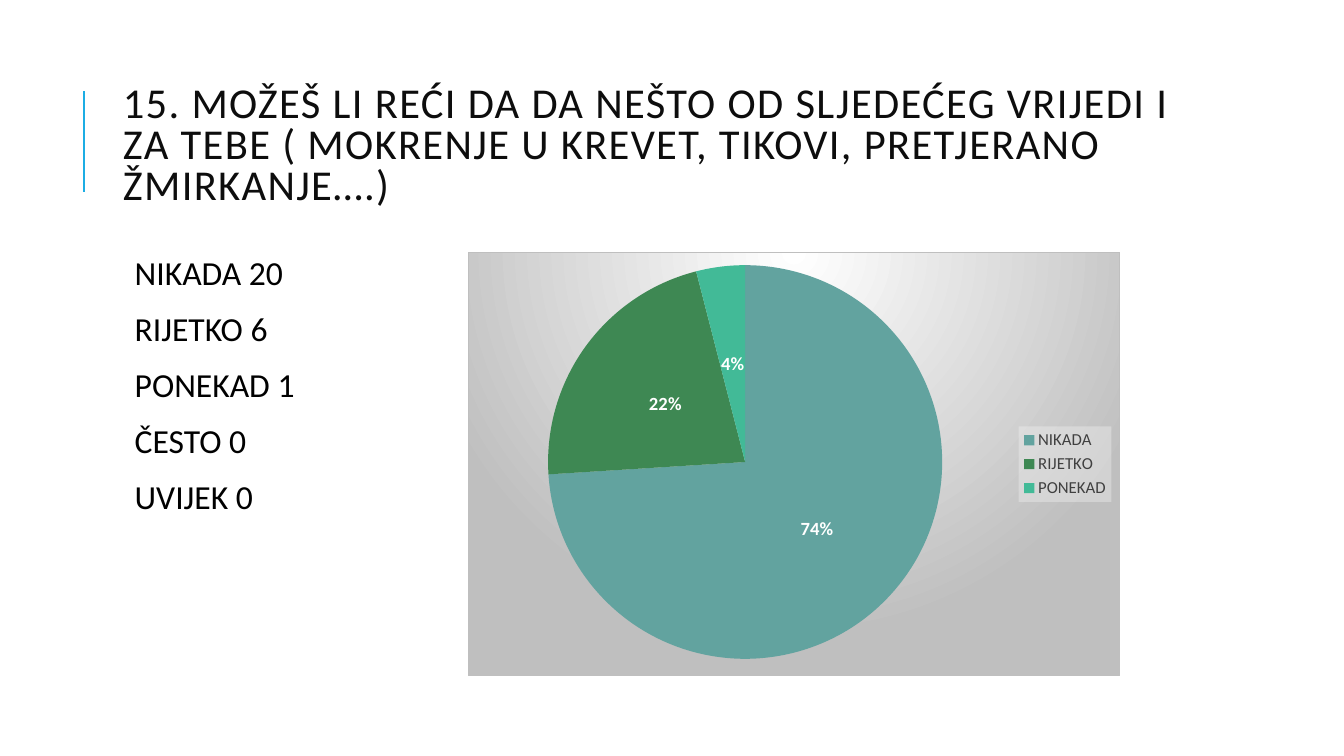
import pptx
import pptx.util
import pptx.oxml
import pptx.chart.data
import pptx.dml.color
import pptx.enum.chart
import pptx.enum.text
from pptx.util import Inches

THEME = {
    "font": "Calibri",
    "accent": "1CADE4",
    "title": "0D0D0D",
    "body": "000000",
    "legend": "404040",
    "legend_back": "F2F2F2",
    "label": "FFFFFF",
    "chart_center": "FFFFFF",
    "chart_edge": "BFBFBF",
    "slices": ["62A39F", "3E8853", "42BA97"],
    "title_size": 30.4,
    "body_size": 24,
    "legend_size": 12,
    "label_size": 13.3,
}
NAMESPACES = (
    'xmlns:a="http://schemas.openxmlformats.org/drawingml/2006/main" '
    'xmlns:c="http://schemas.openxmlformats.org/drawingml/2006/chart"'
)


def style(font, size, color):
    font.name = THEME["font"]
    font.size = pptx.util.Pt(THEME[size])
    font.color.rgb = pptx.dml.color.RGBColor.from_string(THEME[color])


def xml(tag, attributes="", content=""):
    return pptx.oxml.parse_xml(f"<{tag} {NAMESPACES} {attributes}>{content}</{tag}>")


presentation = pptx.Presentation()
presentation.slide_width = Inches(13.33)
presentation.slide_height = Inches(7.5)
slide = presentation.slides.add_slide(presentation.slide_layouts[6])

title_rule = slide.shapes.add_connector(
    pptx.enum.shapes.MSO_CONNECTOR.STRAIGHT,
    Inches(0.83), Inches(1.9), Inches(0.83), Inches(0.9),
)
title_rule.line.color.rgb = pptx.dml.color.RGBColor.from_string(THEME["accent"])
title_rule.line.width = pptx.util.Pt(1.5)
title_rule._element.spPr.append(xml("a:effectLst"))

question = slide.shapes.add_textbox(
    Inches(1.12), Inches(0.64), Inches(10.63), Inches(1.64)
).text_frame
question.word_wrap = True
question.vertical_anchor = pptx.enum.text.MSO_ANCHOR.MIDDLE
question_line = question.paragraphs[0]
question_line.text = (
    "15. MOŽEŠ LI REĆI DA DA NEŠTO OD SLJEDEĆEG VRIJEDI I ZA TEBE "
    "( MOKRENJE U KREVET, TIKOVI, PRETJERANO ŽMIRKANJE….)"
)
question_line.line_spacing = 0.8
style(question_line.font, "title_size", "title")
question_run = question_line.runs[0]
style(question_run.font, "title_size", "title")
question_run._r.get_or_add_rPr().set("spc", "100")

answers = slide.shapes.add_textbox(
    Inches(1.12), Inches(2.5), Inches(10.63), Inches(4.4)
).text_frame
answers.word_wrap = True
answers.margin_left = answers.margin_right = Inches(0.05)
answers.margin_top = answers.margin_bottom = Inches(0.05)
answer_counts = {"NIKADA": 20, "RIJETKO": 6, "PONEKAD": 1, "ČESTO": 0, "UVIJEK": 0}
answers.text = "\n".join(f"{answer} {count}" for answer, count in answer_counts.items())
for answer_line in answers.paragraphs:
    answer_line.line_spacing = 0.9
    answer_line.space_before = pptx.util.Pt(12)
    answer_line.space_after = pptx.util.Pt(2)
    style(answer_line.font, "body_size", "body")
    indents = answer_line._p.get_or_add_pPr()
    indents.set("marL", str(Inches(0.1)))
    indents.set("indent", str(-Inches(0.1)))
    bullet_color = xml("a:buClr", "", f'<a:srgbClr val="{THEME["accent"]}"/>')
    indents.find(pptx.oxml.ns.qn("a:defRPr")).addprevious(bullet_color)
    bullet_color.addnext(xml("a:buChar", 'char=" "'))

shares = pptx.chart.data.CategoryChartData()
shares.categories = ["NIKADA", "RIJETKO", "PONEKAD"]
shares.add_series("Series 1", [74, 22, 4])
pie = slide.shapes.add_chart(
    pptx.enum.chart.XL_CHART_TYPE.PIE,
    Inches(4.64), Inches(2.5), Inches(6.47), Inches(4.21), shares,
).chart
pie.has_title = False
style(pie.font, "legend_size", "legend")

pie_plot = pie.plots[0]
pie_plot.vary_by_categories = True
for index, color in enumerate(THEME["slices"]):
    slice_fill = pie_plot.series[0].points[index].format.fill
    slice_fill.solid()
    slice_fill.fore_color.rgb = pptx.dml.color.RGBColor.from_string(color)

percentages = pie_plot.series[0].data_labels
percentages.show_percentage = True
percentages.show_value = False
percentages.number_format = "0%"
percentages.number_format_is_linked = False
percentages.position = pptx.enum.chart.XL_LABEL_POSITION.CENTER
style(percentages.font, "label_size", "label")
percentages.font.bold = True

pie.has_legend = True
pie.legend.position = pptx.enum.chart.XL_LEGEND_POSITION.RIGHT
pie.legend.include_in_layout = False
style(pie.legend.font, "legend_size", "legend")
pie.legend._element.find(pptx.oxml.ns.qn("c:txPr")).addprevious(xml(
    "c:spPr", "",
    f'<a:solidFill><a:srgbClr val="{THEME["legend_back"]}">'
    '<a:alpha val="39000"/></a:srgbClr></a:solidFill>',
))

chart_body = pie._chartSpace.find(pptx.oxml.ns.qn("c:chart"))
chart_body.addnext(xml(
    "c:spPr", "",
    '<a:gradFill><a:gsLst>'
    f'<a:gs pos="0"><a:srgbClr val="{THEME["chart_center"]}"/></a:gs>'
    f'<a:gs pos="100000"><a:srgbClr val="{THEME["chart_edge"]}"/></a:gs>'
    '</a:gsLst><a:path path="circle">'
    '<a:fillToRect l="50000" t="0" r="50000" b="100000"/></a:path></a:gradFill>'
    f'<a:ln w="{pptx.util.Pt(0.75)}"><a:solidFill>'
    f'<a:srgbClr val="{THEME["chart_edge"]}"/></a:solidFill></a:ln>',
))
plot_area = chart_body.find(pptx.oxml.ns.qn("c:plotArea"))
for old_layout in plot_area.findall(pptx.oxml.ns.qn("c:layout")):
    plot_area.remove(old_layout)
plot_area.insert(0, xml(
    "c:layout", "",
    '<c:manualLayout><c:layoutTarget val="inner"/>'
    '<c:xMode val="edge"/><c:yMode val="edge"/>'
    '<c:x val="0.12"/><c:y val="0.03"/><c:w val="0.61"/><c:h val="0.93"/>'
    '</c:manualLayout>',
))

presentation.save("out.pptx")
